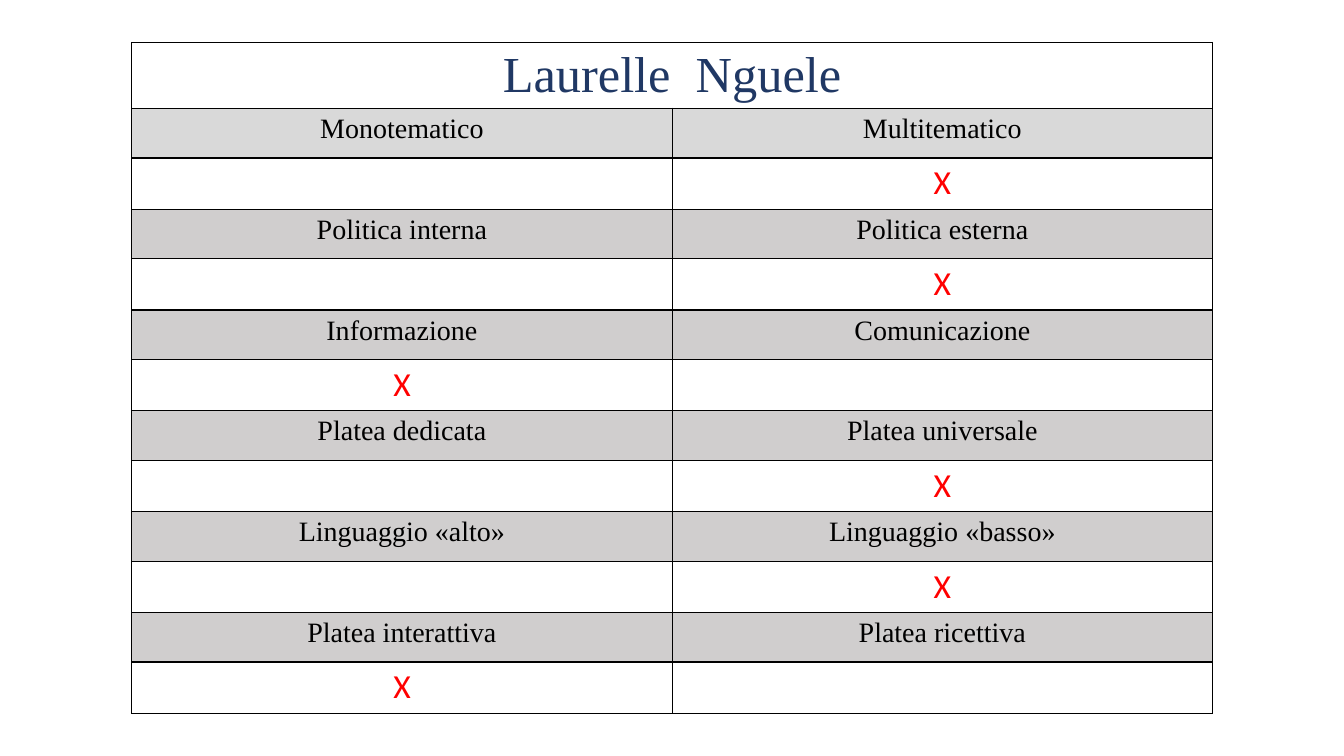
from lxml.etree import SubElement
from pptx import Presentation
from pptx.dml.color import RGBColor
from pptx.enum.text import PP_ALIGN
from pptx.oxml.ns import qn
from pptx.util import Cm, Pt

NAME = "Laurelle  Nguele"
# left label, right label, column that holds the mark
CRITERIA = [
    ("Monotematico", "Multitematico", 1),
    ("Politica interna", "Politica esterna", 1),
    ("Informazione", "Comunicazione", 0),
    ("Platea dedicata", "Platea universale", 1),
    ("Linguaggio «alto»", "Linguaggio «basso»", 1),
    ("Platea interattiva", "Platea ricettiva", 0),
]

NAVY = RGBColor(0x20, 0x38, 0x64)
BLACK = RGBColor(0, 0, 0)
RED = RGBColor(0xFF, 0, 0)
WHITE = RGBColor(0xFF, 0xFF, 0xFF)
LIGHT_GREY = RGBColor(0xD9, 0xD9, 0xD9)
WARM_GREY = RGBColor(0xD0, 0xCE, 0xCE)

SERIF, SANS = "Times New Roman", "Calibri"
LEFT, TOP, WIDTH = Cm(3.32), Cm(1.07), Cm(27.24)
NAME_H, LABEL_H, MARK_H = Cm(1.66), Cm(1.25), Cm(1.29)


def add_borders(cell):
    tcPr = cell._tc.get_or_add_tcPr()
    for i, side in enumerate(("a:lnL", "a:lnR", "a:lnT", "a:lnB")):
        ln = SubElement(tcPr, qn(side), w=str(Pt(1)))
        fill = SubElement(ln, qn("a:solidFill"))
        SubElement(fill, qn("a:srgbClr"), val=str(BLACK))
        tcPr.remove(ln)
        tcPr.insert(i, ln)  # borders come before the cell fill


def write(cell, text, font, size, color):
    p = cell.text_frame.paragraphs[0]
    p.alignment = PP_ALIGN.CENTER
    r = p.add_run()
    r.text = text
    r.font.name = font
    r.font.size = Pt(size)
    r.font.color.rgb = color


def main():
    prs = Presentation()
    prs.slide_width, prs.slide_height = Cm(33.87), Cm(19.05)
    s = prs.slides.add_slide(prs.slide_layouts[6])

    heights = [NAME_H] + [LABEL_H, MARK_H] * len(CRITERIA)
    table = s.shapes.add_table(len(heights), 2, LEFT, TOP, WIDTH, sum(heights)).table
    table.first_row = table.horz_banding = False
    for row, height in zip(table.rows, heights):
        row.height = height
    for cell in table.iter_cells():
        cell.fill.solid()
        cell.fill.fore_color.rgb = WHITE
        add_borders(cell)

    table.cell(0, 0).merge(table.cell(0, 1))
    write(table.cell(0, 0), NAME, SERIF, 36, NAVY)

    for i, (left, right, marked) in enumerate(CRITERIA):
        row = 1 + 2 * i
        for col, label in enumerate((left, right)):
            cell = table.cell(row, col)
            cell.fill.fore_color.rgb = WARM_GREY if i else LIGHT_GREY
            write(cell, label, SERIF, 20, BLACK)
        write(table.cell(row + 1, marked), "X", SANS, 24, RED)

    prs.save("out.pptx")


if __name__ == "__main__":
    main()
